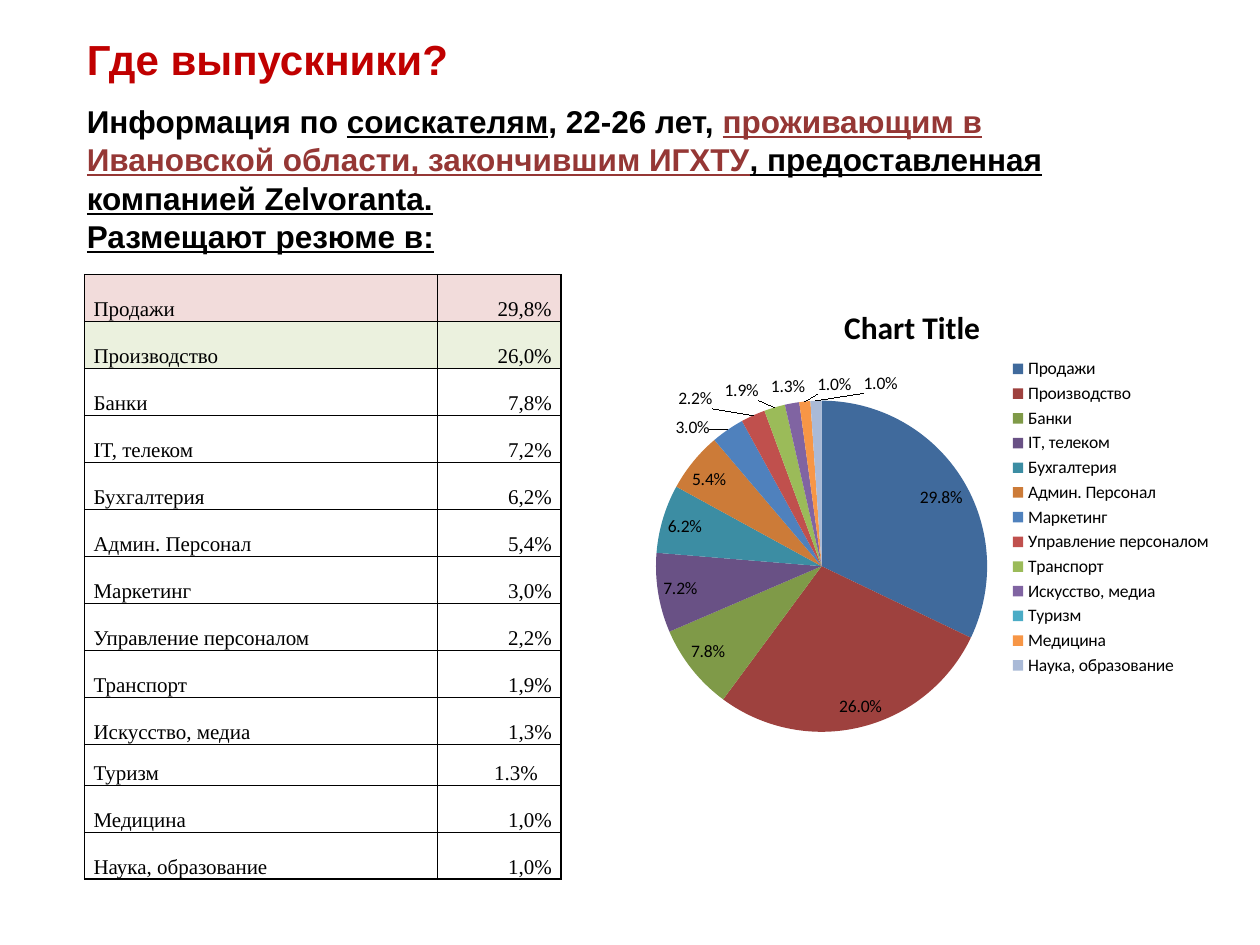
from typing import NamedTuple, Optional

from lxml.etree import SubElement
from pptx import Presentation
from pptx.chart.data import CategoryChartData
from pptx.dml.color import RGBColor
from pptx.enum.chart import XL_CHART_TYPE as ChartType
from pptx.enum.chart import XL_LABEL_POSITION as LabelPosition
from pptx.enum.chart import XL_LEGEND_POSITION as LegendPosition
from pptx.enum.text import MSO_ANCHOR as Anchor
from pptx.enum.text import PP_ALIGN as Align
from pptx.oxml.ns import qn
from pptx.util import Pt

COLORS = {
    "black": "000000",
    "heading": "C00000",
    "accent": "953735",
    "pink": "F2DCDB",
    "green": "EBF1DE",
}


class Field(NamedTuple):
    name: str
    share_text: str
    share: Optional[float]
    slice_color: str
    row_fill: Optional[str] = None
    height: float = 26.86
    right_margin: float = 5.2


class Phrase(NamedTuple):
    text: str
    color: str = "black"
    underline: bool = False


class Line(NamedTuple):
    phrases: list
    size: float
    pitch: float
    space_before: float = 0


FIELDS = [
    Field("Продажи", "29,8%", 0.298, "406A9C", "pink"),
    Field("Производство", "26,0%", 0.26, "9E413E", "green"),
    Field("Банки", "7,8%", 0.078, "7F9A48"),
    Field("IT, телеком", "7,2%", 0.072, "695185"),
    Field("Бухгалтерия", "6,2%", 0.062, "3C8DA3"),
    Field("Админ. Персонал", "5,4%", 0.054, "CC7B38"),
    Field("Маркетинг", "3,0%", 0.03, "4F81BD"),
    Field("Управление персоналом", "2,2%", 0.022, "C0504D"),
    Field("Транспорт", "1,9%", 0.019, "9BBB59"),
    Field("Искусство, медиа", "1,3%", 0.013, "8064A2"),
    Field("Туризм", "1.3%", None, "4BACC6", height=23.4, right_margin=13.2),
    Field("Медицина", "1,0%", 0.01, "F79646"),
    Field("Наука, образование", "1,0%", 0.01, "AABAD7"),
]

LINES = [
    Line([Phrase("Где выпускники?", "heading")], 24, 29.3),
    Line([
        Phrase("Информация по "),
        Phrase("соискателям", underline=True),
        Phrase(", 22-26 лет, "),
        Phrase("проживающим в Ивановской области, закончившим ИГХТУ", "accent", True),
        Phrase(", предоставленная компанией Zelvoranta.", underline=True),
    ], 18, 22, 9.8),
    Line([Phrase("Размещают резюме в:", underline=True)], 18, 22),
]


def rgb(name: str) -> RGBColor:
    return RGBColor.from_string(COLORS[name])


def add_heading(slide) -> None:
    box = slide.shapes.add_textbox(Pt(42.5), Pt(15.1), Pt(589.7), Pt(133.2))
    frame = box.text_frame
    frame.word_wrap = True
    for index, line in enumerate(LINES):
        paragraph = frame.add_paragraph() if index else frame.paragraphs[0]
        paragraph.line_spacing = Pt(line.pitch)
        paragraph.space_before = Pt(line.space_before)
        for phrase in line.phrases:
            run = paragraph.add_run()
            run.text = phrase.text
            run.font.name = "Arial"
            run.font.size = Pt(line.size)
            run.font.bold = True
            run.font.underline = phrase.underline
            run.font.color.rgb = rgb(phrase.color)


def add_borders(cell) -> None:
    """Put the four border lines ahead of the fill, as the schema asks."""
    properties = cell._tc.get_or_add_tcPr()
    for position, side in enumerate(("lnL", "lnR", "lnT", "lnB")):
        border = SubElement(properties, qn(f"a:{side}"), w=str(Pt(1)))
        fill = SubElement(border, qn("a:solidFill"))
        SubElement(fill, qn("a:srgbClr"), val=COLORS["black"])
        properties.insert(position, border)


def fill_cell(cell, text: str, align: Align, field: Field, right_margin: float) -> None:
    cell.vertical_anchor = Anchor.BOTTOM
    cell.margin_left, cell.margin_right = Pt(5.2), Pt(right_margin)
    cell.margin_top = cell.margin_bottom = 0
    if field.row_fill:
        cell.fill.solid()
        cell.fill.fore_color.rgb = rgb(field.row_fill)
    else:
        cell.fill.background()
    add_borders(cell)
    paragraph = cell.text_frame.paragraphs[0]
    paragraph.alignment = align
    paragraph.line_spacing = 1.5
    run = paragraph.add_run()
    run.text = text
    run.font.name = "Times New Roman"
    run.font.size = Pt(12)
    run.font.bold = False
    run.font.color.rgb = rgb("black")


def add_share_table(slide) -> None:
    total_height = sum(field.height for field in FIELDS)
    table = slide.shapes.add_table(
        len(FIELDS), 2, Pt(48.3), Pt(156.9), Pt(272.2), Pt(total_height)
    ).table
    table.first_row = table.horz_banding = False
    table.columns[0].width, table.columns[1].width = Pt(201.6), Pt(70.6)
    for index, field in enumerate(FIELDS):
        table.rows[index].height = Pt(field.height)
        fill_cell(table.cell(index, 0), field.name, Align.JUSTIFY, field, 5.2)
        fill_cell(table.cell(index, 1), field.share_text, Align.RIGHT, field,
                  field.right_margin)


def place_plot(chart, **fractions: float) -> None:
    """Fix the inner plot area as fractions of the chart (x, y, w, h)."""
    plot_area = chart._chartSpace.chart.plotArea
    for old in plot_area.findall(qn("c:layout")):
        plot_area.remove(old)
    layout = SubElement(plot_area, qn("c:layout"))
    plot_area.insert(0, layout)
    manual = SubElement(layout, qn("c:manualLayout"))
    settings = {"layoutTarget": "inner", "xMode": "edge", "yMode": "edge", **fractions}
    for tag, value in settings.items():
        SubElement(manual, qn(f"c:{tag}"), val=str(value))


def add_share_chart(slide) -> None:
    shares = CategoryChartData(number_format="0.0%")
    shares.categories = [field.name for field in FIELDS]
    shares.add_series("Series 1", [field.share for field in FIELDS])
    chart = slide.shapes.add_chart(
        ChartType.PIE, Pt(342.7), Pt(162), Pt(357.1), Pt(267.1), shares
    ).chart
    chart.font.name = "Calibri"
    chart.font.size = Pt(10)
    chart.font.color.rgb = rgb("black")

    chart.has_title = True
    title = chart.chart_title.text_frame.paragraphs[0].add_run()
    title.text = "Chart Title"
    title.font.size = Pt(18)
    title.font.bold = True

    chart.has_legend = True
    chart.legend.position = LegendPosition.RIGHT
    chart.legend.include_in_layout = False

    pie = chart.plots[0]
    pie.vary_by_categories = True
    pie.has_data_labels = True
    labels = pie.data_labels
    labels.show_value = True
    labels.show_percentage = False
    labels.number_format = "0.0%"
    labels.number_format_is_linked = False
    labels.position = LabelPosition.BEST_FIT
    for index, field in enumerate(FIELDS):
        fill = pie.series[0].points[index].format.fill
        fill.solid()
        fill.fore_color.rgb = RGBColor.from_string(field.slice_color)
    place_plot(chart, x=0.09, y=0.25, w=0.53, h=0.71)


def main() -> None:
    presentation = Presentation()
    presentation.slide_width, presentation.slide_height = Pt(720), Pt(540)
    slide = presentation.slides.add_slide(presentation.slide_layouts[6])
    add_share_table(slide)
    add_share_chart(slide)
    add_heading(slide)
    presentation.save("out.pptx")


if __name__ == "__main__":
    main()
